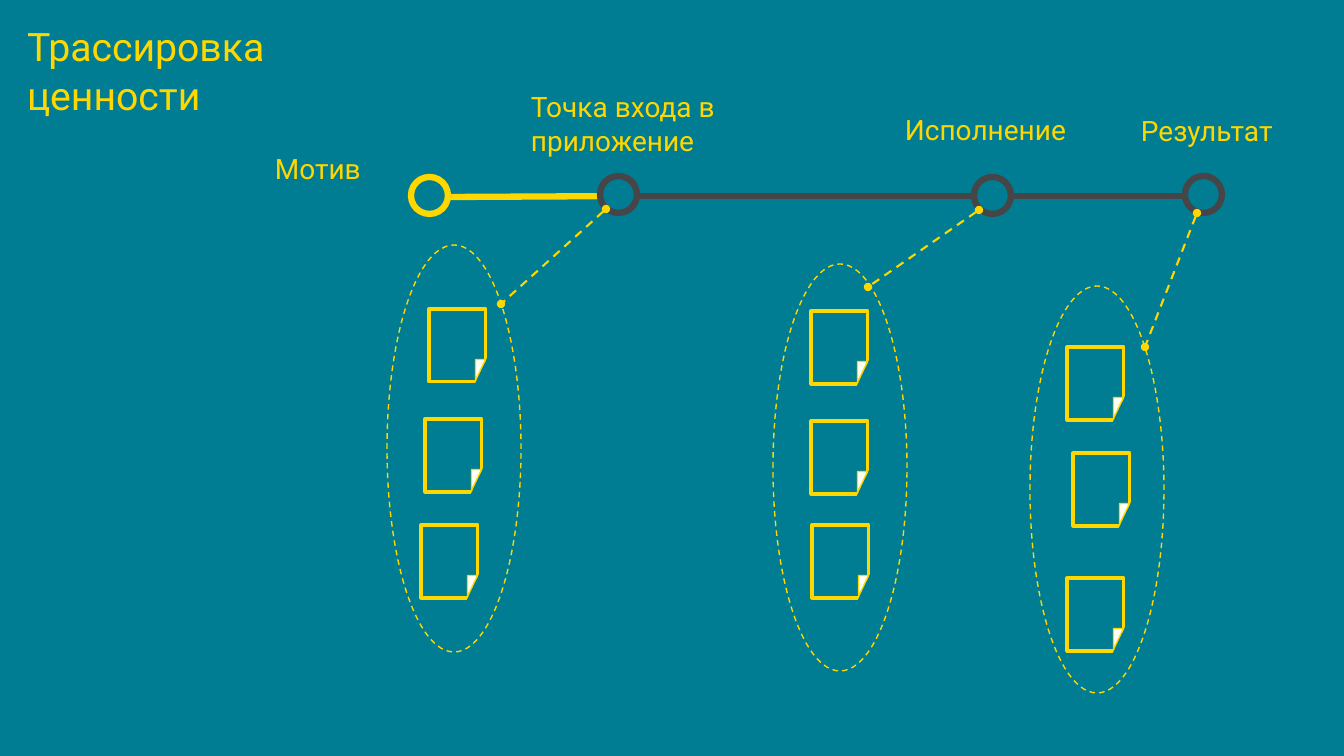
from lxml.etree import SubElement
from pptx import Presentation
from pptx.dml.color import RGBColor
from pptx.enum.dml import MSO_LINE
from pptx.enum.shapes import MSO_CONNECTOR, MSO_SHAPE
from pptx.enum.text import MSO_ANCHOR, PP_ALIGN
from pptx.oxml.ns import qn
from pptx.util import Pt

PX = 914400 / 100.8  # EMU in one px
TEAL = RGBColor(0x00, 0x7D, 0x92)
GOLD = RGBColor(0xFF, 0xD7, 0x00)
GRAPHITE = RGBColor(0x46, 0x45, 0x47)
WHITE = RGBColor(0xFF, 0xFF, 0xFF)
FONT = "Roboto"

# Stage: label, label box, top left of its marker, marker colour
MARKER = 37
STAGES = [
    ("Мотив", (265, 147, 152, 44), (411, 177), GOLD),
    ("Точка входа в приложение", (521, 85, 232, 78), (600, 176), GRAPHITE),
    ("Исполнение", (895, 108, 226, 44), (974, 177), GRAPHITE),
    ("Результат", (1131, 109, 188, 44), (1185, 176), GRAPHITE),
]
TRACK = [((448, 197), (637, 196), GOLD), ((637, 196), (1185, 196), GRAPHITE)]

# Artifact set: oval box, offsets of its pages in the oval, leader ends
ARTIFACT_SETS = [
    ((387, 245, 134, 407), [(42, 64), (38, 174), (34, 280)],
     ((606, 209), (501, 304))),
    ((773, 264, 134, 407), [(38, 47), (38, 157), (39, 261)],
     ((979, 210), (868, 287))),
    ((1030, 286, 134, 407), [(37, 61), (43, 167), (37, 292)],
     ((1197, 213), (1145, 347))),
]


def emu(*lengths):
    return [round(length * PX) for length in lengths]


def draw_shape(shapes, kind, box, fill, color, weight):
    shape = shapes.add_shape(kind, *emu(*box))
    shape.shadow.inherit = False
    if fill is None:
        shape.fill.background()
    else:
        shape.fill.solid()
        shape.fill.fore_color.rgb = fill
    shape.line.color.rgb = color
    shape.line.width = Pt(weight)
    return shape


def draw_line(shapes, start, end, color, weight):
    line = shapes.add_connector(MSO_CONNECTOR.STRAIGHT, *emu(*start, *end))
    line.line.color.rgb = color
    line.line.width = Pt(weight)
    SubElement(line._element.spPr, qn("a:effectLst"))
    return line


def write(frame, text, size):
    frame.word_wrap = True
    frame.vertical_anchor = MSO_ANCHOR.TOP
    frame.text = text
    paragraph = frame.paragraphs[0]
    paragraph.alignment = PP_ALIGN.LEFT
    font = paragraph.runs[0].font
    font.name, font.size, font.color.rgb = FONT, Pt(size), GOLD
    return paragraph


def draw_title(slide, box):
    title = slide.shapes.title
    title.left, title.top, title.width, title.height = emu(*box)
    write(title.text_frame, "Трассировка ценности", 28).line_spacing = 1.05


def draw_timeline(shapes):
    for start, end, color in TRACK:
        draw_line(shapes, start, end, color, 4.5)
    for label, label_box, marker_at, color in STAGES:
        draw_shape(shapes, MSO_SHAPE.OVAL, (*marker_at, MARKER, MARKER),
                   TEAL, color, 4.5)
        write(shapes.add_textbox(*emu(*label_box)).text_frame, label, 20)


def draw_page(shapes, left, top):
    page = shapes.add_group_shape().shapes
    draw_shape(page, MSO_SHAPE.RECTANGLE, (left, top, 57, 73), None, GOLD, 2.25)
    # The first triangle hides the sheet's corner, the second is the fold
    cut = draw_shape(page, MSO_SHAPE.ISOSCELES_TRIANGLE,
                     (left + 39, top + 54, 28, 15), TEAL, TEAL, 1)
    fold = draw_shape(page, MSO_SHAPE.ISOSCELES_TRIANGLE,
                      (left + 41, top + 56, 21, 10), WHITE, GOLD, 1)
    for corner, angle in ((cut, 267), (fold, 90)):
        corner.adjustments[0] = 0
        corner.rotation = angle


def draw_artifact_set(shapes, box, page_offsets, leader_ends):
    left, top = box[:2]
    for dx, dy in page_offsets:
        draw_page(shapes, left + dx, top + dy)
    oval = draw_shape(shapes, MSO_SHAPE.OVAL, box, None, GOLD, 1)
    leader = draw_line(shapes, *leader_ends, GOLD, 1.5)
    for dashed in (oval, leader):
        dashed.line.dash_style = MSO_LINE.DASH
    for end in ("a:headEnd", "a:tailEnd"):
        SubElement(leader.line._get_or_add_ln(), qn(end), type="oval")


def main():
    deck = Presentation()
    deck.slide_width, deck.slide_height = emu(1344, 756)
    slide = deck.slides.add_slide(deck.slide_layouts[5])
    slide.background.fill.solid()
    slide.background.fill.fore_color.rgb = TEAL

    draw_title(slide, (17, 15, 434, 104))
    draw_timeline(slide.shapes)
    for artifact_set in ARTIFACT_SETS:
        draw_artifact_set(slide.shapes, *artifact_set)
    deck.save("out.pptx")


if __name__ == "__main__":
    main()
